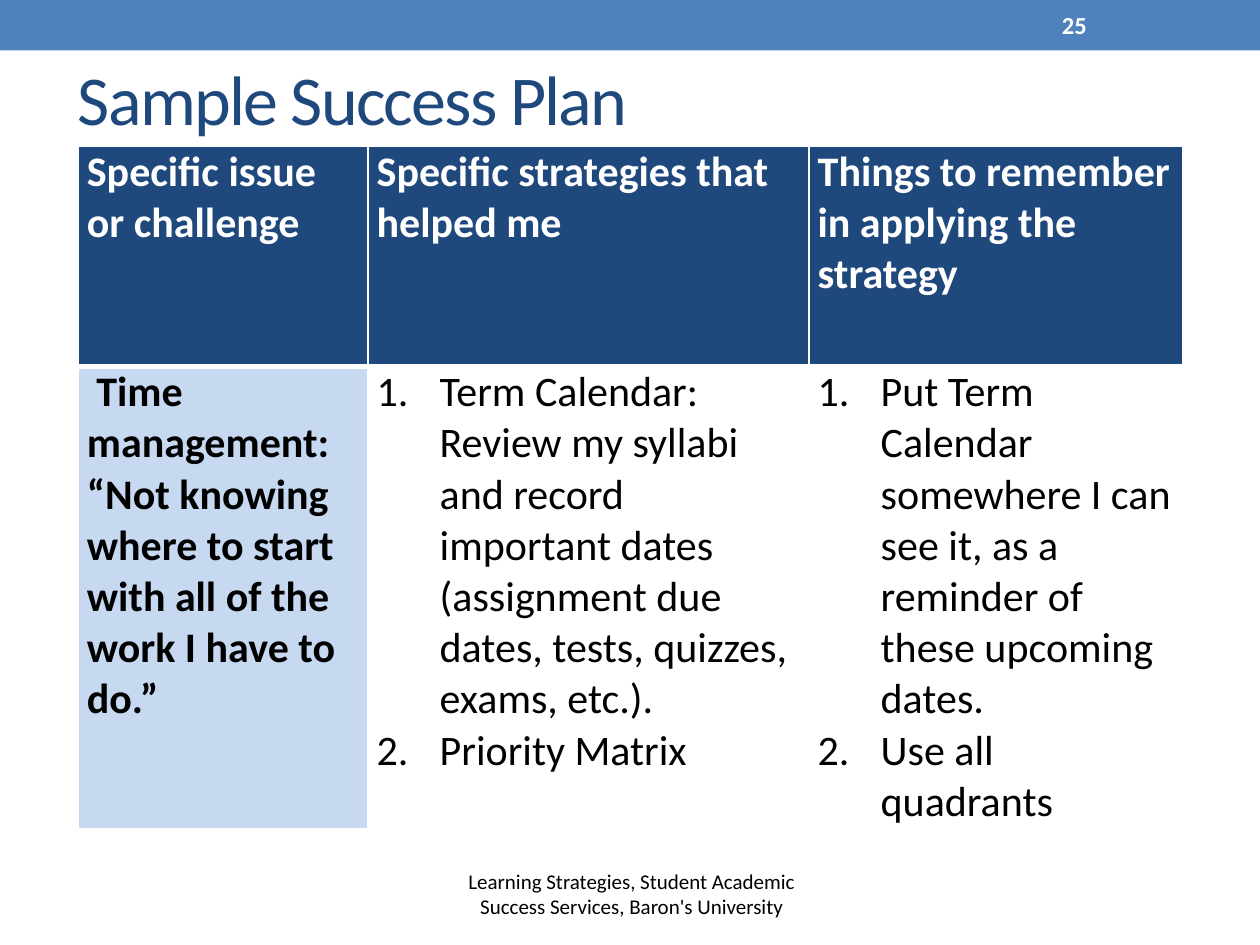
from dataclasses import dataclass

from lxml import etree
from pptx import Presentation
from pptx.dml.color import RGBColor
from pptx.enum.shapes import MSO_SHAPE
from pptx.enum.text import MSO_ANCHOR, PP_ALIGN
from pptx.oxml.ns import qn
from pptx.slide import Slide
from pptx.util import Inches, Pt

RECTANGLE = MSO_SHAPE.RECTANGLE
MIDDLE = MSO_ANCHOR.MIDDLE
LEFT, CENTER = PP_ALIGN.LEFT, PP_ALIGN.CENTER

COLORS = {
    "band": "4F81BD",
    "navy": "1F497D",
    "pale": "C6D9F1",
    "white": "FFFFFF",
    "black": "000000",
}
COLUMN_WIDTHS = [2.3, 3.5, 2.97]
ROW_HEIGHTS = [1.75, 3.67]
HEADINGS = [
    "Specific issue or challenge",
    "Specific strategies that helped me",
    "Things to remember in applying the strategy",
]
CHALLENGE = [
    " Time management:",
    "“Not knowing where to start with all of the work I have to do.”",
]
STRATEGIES = [
    "Term Calendar: Review my syllabi and record important dates "
    "(assignment due dates, tests, quizzes, exams, etc.).",
    "Priority Matrix",
]
REMINDERS = [
    "Put Term Calendar somewhere I can see it, as a reminder of these upcoming dates.",
    "Use all quadrants",
]


@dataclass
class SlideBuilder:
    """Draws styled elements on the current slide."""

    slide: Slide
    font: str = "Calibri"

    def color(self, name):
        return RGBColor.from_string(COLORS[name])

    def style(self, paragraph, size, color, bold=False, align=LEFT):
        font = paragraph.font
        font.name, font.size, font.bold = self.font, Pt(size), bold
        font.color.rgb = self.color(color)
        paragraph.alignment = align

    def band(self, left, top, width, height, color):
        band = self.slide.shapes.add_shape(
            RECTANGLE, Inches(left), Inches(top), Inches(width), Inches(height)
        )
        band.shadow.inherit = False
        band.fill.solid()
        band.fill.fore_color.rgb = self.color(color)
        band.line.fill.background()

    def text(self, box, words, size, color, bold=False, align=LEFT, spacing=0):
        frame = self.slide.shapes.add_textbox(*map(Inches, box)).text_frame
        frame.word_wrap = True
        frame.vertical_anchor = MIDDLE
        paragraph = frame.paragraphs[0]
        run = paragraph.add_run()
        run.text = words
        self.style(paragraph, size, color, bold, align)
        if spacing:
            run.font._element.set("spc", str(spacing * 100))

    def table(self, left, top, widths, heights):
        table = self.slide.shapes.add_table(
            len(heights), len(widths), Inches(left), Inches(top),
            Inches(sum(widths)), Inches(sum(heights)),
        ).table
        table.horz_banding = False
        for column, width in zip(table.columns, widths):
            column.width = Inches(width)
        for row, height in zip(table.rows, heights):
            row.height = Inches(height)
        return table

    def cell(self, cell, lines, color, fill=None, bold=False, numbered=False, top=1, bottom=1):
        cell.margin_left = cell.margin_right = Inches(0.07)
        cell.margin_top = cell.margin_bottom = 0
        if fill:
            cell.fill.solid()
            cell.fill.fore_color.rgb = self.color(fill)
        else:
            cell.fill.background()
        self.borders(cell, {"lnL": 1, "lnR": 1, "lnT": top, "lnB": bottom})
        cell.text = "\n".join(lines)
        for paragraph in cell.text_frame.paragraphs:
            self.style(paragraph, 24, color, bold)
            if numbered:
                self.number(paragraph)

    def borders(self, cell, widths):
        properties = cell._tc.get_or_add_tcPr()
        for position, (side, width) in enumerate(widths.items()):
            line = etree.Element(qn(f"a:{side}"), w=str(Pt(width)))
            fill = etree.SubElement(line, qn("a:solidFill"))
            etree.SubElement(fill, qn("a:srgbClr"), val=COLORS["white"])
            properties.insert(position, line)

    def number(self, paragraph):
        properties = paragraph._p.get_or_add_pPr()
        properties.set("marL", str(Inches(0.5)))
        properties.set("indent", str(Inches(-0.5)))
        numbering = etree.Element(qn("a:buAutoNum"), type="arabicPeriod")
        properties.insert(0, numbering)


def main():
    presentation = Presentation()
    presentation.slide_width, presentation.slide_height = Inches(10), Inches(7.5)
    builder = SlideBuilder(presentation.slides.add_slide(presentation.slide_layouts[6]))

    builder.band(0, 0, 10, 0.4, "band")
    builder.text((0.52, 0.42, 9, 0.7), "Sample Success Plan", 40, "navy", spacing=-1)

    plan = builder.table(0.62, 1.16, COLUMN_WIDTHS, ROW_HEIGHTS)
    for column, heading in enumerate(HEADINGS):
        builder.cell(plan.cell(0, column), [heading], "white", "navy", bold=True, bottom=3)
    builder.cell(plan.cell(1, 0), CHALLENGE, "black", "pale", bold=True, top=3)
    for column, steps in enumerate([STRATEGIES, REMINDERS], start=1):
        builder.cell(plan.cell(1, column), steps, "black", numbered=True, top=3)

    builder.text(
        (3.43, 6.83, 3.17, 0.52),
        "Learning Strategies, Student Academic Success Services, Baron's University",
        12, "black", align=CENTER,
    )
    builder.text((8.33, 0.02, 1.17, 0.36), "25", 14, "white", bold=True)
    presentation.save("out.pptx")


if __name__ == "__main__":
    main()
